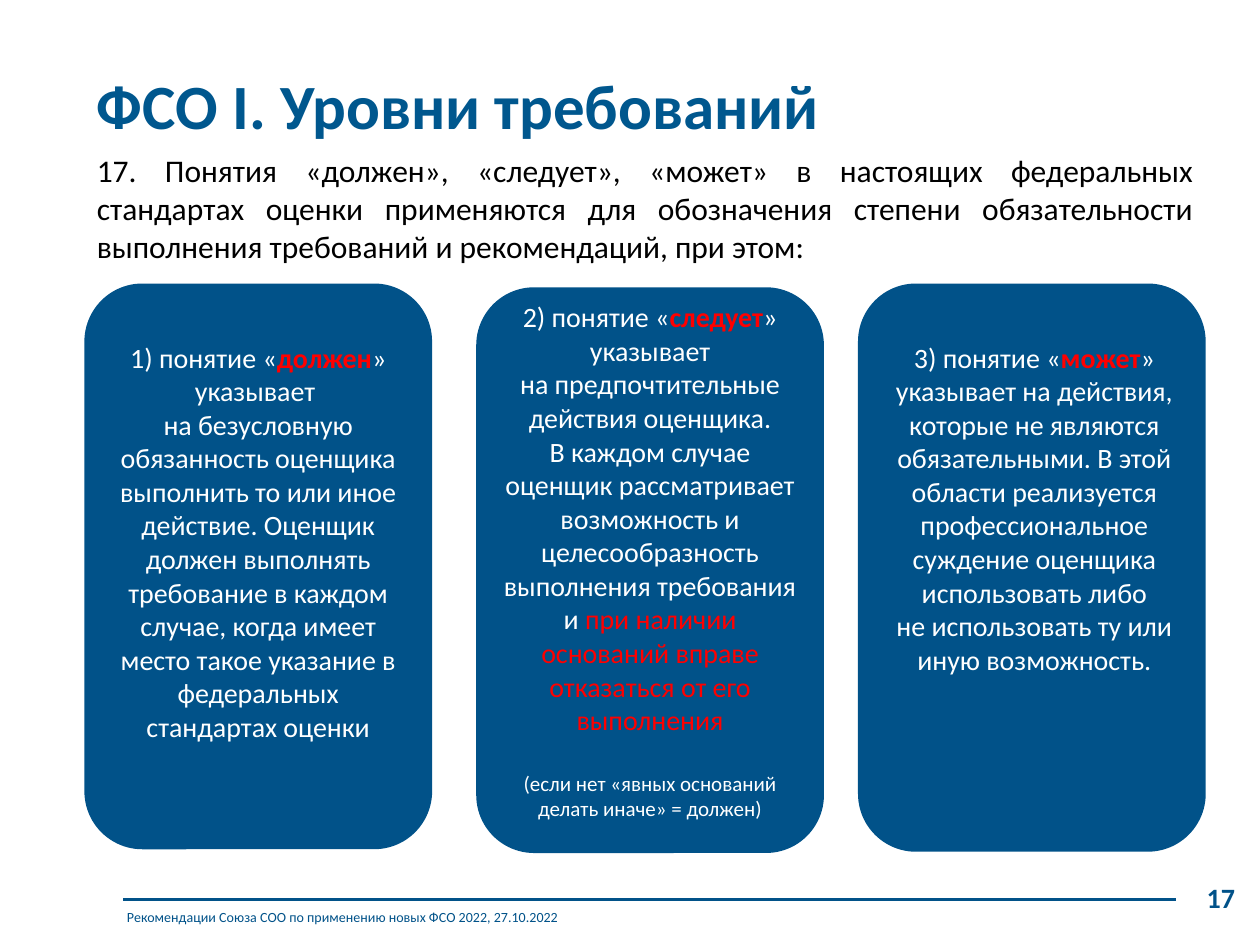
from copy import deepcopy

from lxml.etree import SubElement
from pptx import Presentation
from pptx.dml.color import RGBColor
from pptx.enum.shapes import MSO_CONNECTOR, MSO_SHAPE
from pptx.enum.text import MSO_ANCHOR, PP_ALIGN
from pptx.oxml.ns import qn
from pptx.util import Inches, Pt

FONT = "Calibri"
BLUE, TITLE_BLUE = "015289", "00578E"
BLACK, WHITE, RED = "000000", "FFFFFF", "FF0000"


def color(hex_text):
    return RGBColor.from_string(hex_text)


def add_span(para, text, size=16, fill=WHITE, bold=False):
    """Add formatted text; each newline becomes a line break of the same size."""
    for index, line in enumerate(text.split("\n")):
        if index:
            para.add_line_break()
            line_break = para._p[-1]
        span = para.add_run()
        span.text = line
        span.font.name = FONT
        span.font.size = Pt(size)
        span.font.bold = bold
        span.font.color.rgb = color(fill)
        if index:
            line_break.append(deepcopy(span._r.rPr))


class SlideBuilder:
    """Holds the slide and draws its elements in the common style."""

    def __init__(self, deck):
        self.slide = deck.slides.add_slide(deck.slide_layouts[6])

    def text(self, left, top, width, height, *paragraphs,
             align=PP_ALIGN.LEFT, anchor=MSO_ANCHOR.TOP, gap=0):
        """Each paragraph is a list of (text, format) pairs; gap is in points."""
        box = self.slide.shapes.add_textbox(
            Inches(left), Inches(top), Inches(width), Inches(height))
        frame = box.text_frame
        frame.word_wrap = True
        frame.vertical_anchor = anchor
        for index, spans in enumerate(paragraphs):
            para = frame.add_paragraph() if index else frame.paragraphs[0]
            para.alignment = align
            if index:
                para.space_before = Pt(gap)
            for text, style in spans:
                add_span(para, text, **style)

    def card(self, left, top, width, height):
        shape = self.slide.shapes.add_shape(
            MSO_SHAPE.ROUNDED_RECTANGLE,
            Inches(left), Inches(top), Inches(width), Inches(height))
        shape.shadow.inherit = False
        shape.fill.solid()
        shape.fill.fore_color.rgb = color(BLUE)
        shape.line.fill.background()

    def rule(self, left, right, top):
        line = self.slide.shapes.add_connector(
            MSO_CONNECTOR.STRAIGHT,
            Inches(left), Inches(top), Inches(right), Inches(top))
        line.line.color.rgb = color(BLUE)
        line.line.width = Pt(1.5)
        SubElement(line._element.spPr, qn("a:effectLst"))


KEYWORD = {"fill": RED, "bold": True}
CARDS = [
    {"card": (0.67, 2.25, 2.76, 4.49), "text": (0.77, 2.65, 2.56, 3.33),
     "paragraphs": [[
         ("1) понятие «", {}), ("должен", KEYWORD),
         ("» указывает \nна безусловную обязанность оценщика выполнить то или "
          "иное действие. Оценщик должен выполнять требование в каждом случае, "
          "когда имеет место такое указание в федеральных стандартах оценки", {}),
     ]]},
    {"card": (3.78, 2.28, 2.76, 4.49), "text": (3.88, 2.33, 2.56, 4.27),
     "paragraphs": [[
         ("2) понятие «", {}), ("следует", KEYWORD),
         ("» указывает\nна предпочтительные действия оценщика.\nВ каждом случае "
          "оценщик рассматривает возможность и целесообразность выполнения "
          "требования и ", {}),
         ("при наличии оснований вправе отказаться от его выполнения",
          {"fill": RED}),
     ], [
         ("(если нет «явных оснований делать иначе» = должен)", {"size": 12}),
     ]]},
    {"card": (6.81, 2.25, 2.76, 4.51), "text": (7.01, 2.65, 2.4, 3.1),
     "paragraphs": [[
         ("3) понятие «", {}), ("может", KEYWORD),
         ("» указывает на действия, которые не являются обязательными. В этой "
          "области реализуется профессиональное суждение оценщика использовать "
          "либо\nне использовать ту или иную возможность.", {}),
     ]]},
]


def main():
    deck = Presentation()
    deck.slide_width, deck.slide_height = Inches(10), Inches(7.5)
    page = SlideBuilder(deck)

    page.text(7.28, 6.94, 2.62, 0.37,
              [("17", {"fill": BLUE, "bold": True})], align=PP_ALIGN.RIGHT)
    page.rule(0.98, 9.33, 7.14)
    page.text(0.91, 7.16, 8.34, 0.24,
              [("Рекомендации Союза СОО по применению новых ФСО 2022, 27.10.2022",
                {"size": 8, "fill": BLUE})])

    page.text(0.67, 0.43, 5.98, 0.8,
              [("ФСО I. Уровни требований",
                {"size": 36, "fill": TITLE_BLUE, "bold": True})],
              anchor=MSO_ANCHOR.MIDDLE)
    page.text(0.67, 1.15, 8.9, 1.31,
              [("17. Понятия «должен», «следует», «может» в настоящих федеральных "
                "стандартах оценки применяются для обозначения степени "
                "обязательности выполнения требований и рекомендаций, при этом:",
                {"size": 18, "fill": BLACK})],
              align=PP_ALIGN.JUSTIFY)

    for level in CARDS:
        page.card(*level["card"])
        page.text(*level["text"], *level["paragraphs"],
                  align=PP_ALIGN.CENTER, gap=19.5)

    deck.save("out.pptx")


if __name__ == "__main__":
    main()
